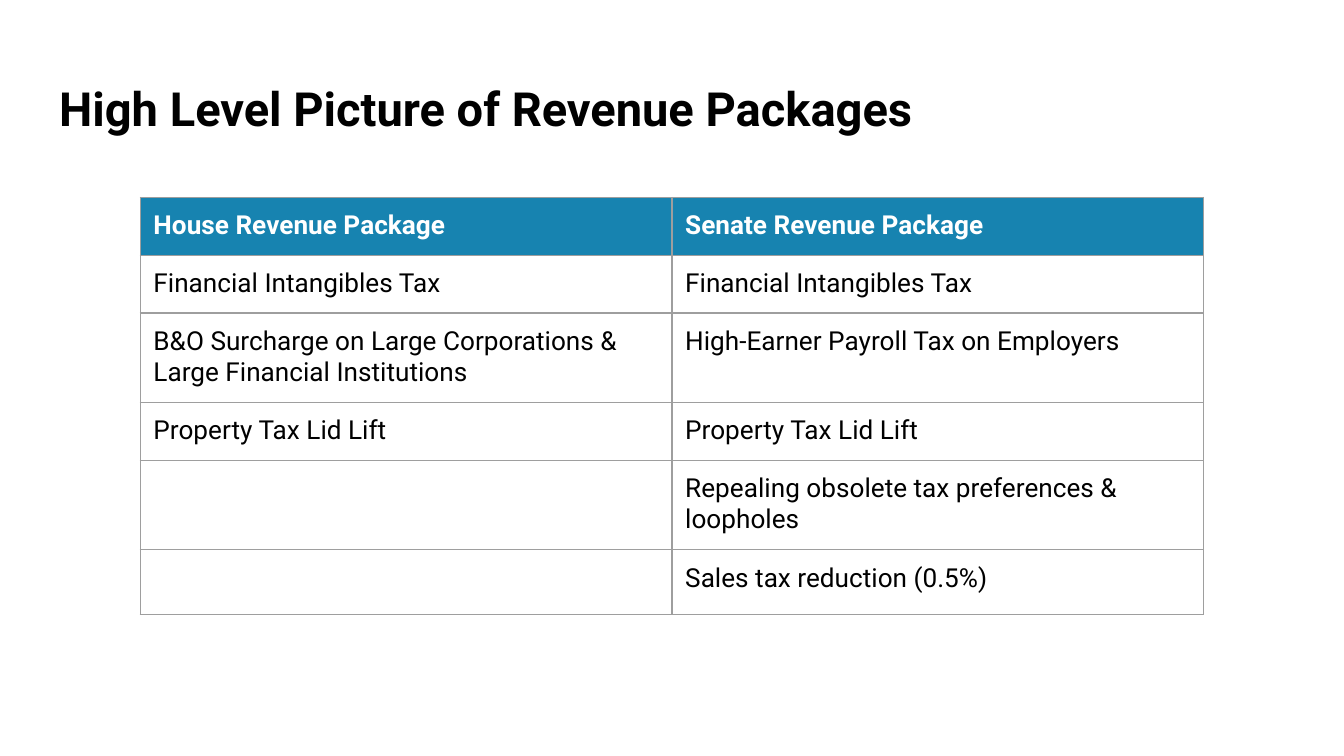
from lxml import etree
from pptx import Presentation
from pptx.dml.color import RGBColor
from pptx.enum.text import MSO_ANCHOR
from pptx.oxml.ns import qn
from pptx.util import Cm, Pt

TOP = MSO_ANCHOR.TOP
MIDDLE = MSO_ANCHOR.MIDDLE
COLORS = {"text": "000000", "header": "1783B0", "header_text": "FFFFFF", "border": "9E9E9E"}
FONT = "Roboto"
INSET = Cm(0.25)
BORDER_WIDTH = Pt(0.75)


class SlideBuilder:
    def __init__(self, slide):
        self.slide = slide

    def style(self, paragraph, size, color, bold):
        for run in paragraph.runs:
            run.font.name = FONT
            run.font.size = Pt(size)
            run.font.bold = bold
            run.font.color.rgb = RGBColor.from_string(COLORS[color])

    def set_insets(self, holder):
        holder.margin_left = holder.margin_right = INSET
        holder.margin_top = holder.margin_bottom = INSET

    def title(self, text, left, top, width, height):
        frame = self.slide.shapes.add_textbox(Cm(left), Cm(top), Cm(width), Cm(height)).text_frame
        frame.word_wrap = True
        frame.vertical_anchor = MIDDLE
        self.set_insets(frame)
        frame.text = text
        self.style(frame.paragraphs[0], 25.2, "text", True)

    def border(self, cell):
        properties = cell._tc.get_or_add_tcPr()
        for position, side in enumerate(("lnL", "lnR", "lnT", "lnB")):
            line = etree.Element(qn(f"a:{side}"), w=str(BORDER_WIDTH))
            fill = etree.SubElement(line, qn("a:solidFill"))
            etree.SubElement(fill, qn("a:srgbClr"), val=COLORS["border"])
            properties.insert(position, line)

    def cell(self, cell, text, is_header):
        self.set_insets(cell)
        cell.vertical_anchor = TOP
        if is_header:
            cell.fill.solid()
            cell.fill.fore_color.rgb = RGBColor.from_string(COLORS["header"])
        else:
            cell.fill.background()
        self.border(cell)
        paragraph = cell.text_frame.paragraphs[0]
        if text:
            paragraph.text = text
            self.style(paragraph, 14, "header_text" if is_header else "text", is_header)
        else:
            # Keep empty cells from stretching their row
            paragraph._p.get_or_add_endParaRPr().set("sz", "1400")

    def table(self, rows, heights, left, top, column_width):
        columns = len(rows[0])
        table = self.slide.shapes.add_table(
            len(rows), columns, Cm(left), Cm(top),
            Cm(column_width * columns), Cm(sum(heights))).table
        table.horz_banding = False
        for column in table.columns:
            column.width = Cm(column_width)
        for r, (texts, height) in enumerate(zip(rows, heights)):
            table.rows[r].height = Cm(height)
            for c, text in enumerate(texts):
                self.cell(table.cell(r, c), text, r == 0)


def main():
    presentation = Presentation()
    presentation.slide_width = Cm(25.4)
    presentation.slide_height = Cm(14.29)
    builder = SlideBuilder(presentation.slides.add_slide(presentation.slide_layouts[6]))

    # Heading
    builder.title("High Level Picture of Revenue Packages", 0.87, 1.24, 23.67, 1.6)

    # House and Senate comparison
    packages = [
        ("House Revenue Package", "Senate Revenue Package"),
        ("Financial Intangibles Tax", "Financial Intangibles Tax"),
        ("B&O Surcharge on Large Corporations & Large Financial Institutions",
         "High-Earner Payroll Tax on Employers"),
        ("Property Tax Lid Lift", "Property Tax Lid Lift"),
        ("", "Repealing obsolete tax preferences & loopholes"),
        ("", "Sales tax reduction (0.5%)"),
    ]
    one_line, two_lines, last_row = 1.09, 1.67, 1.23
    heights = [one_line, one_line, two_lines, one_line, two_lines, last_row]
    builder.table(packages, heights, 2.65, 3.73, 10.05)

    presentation.save("out.pptx")


if __name__ == "__main__":
    main()
